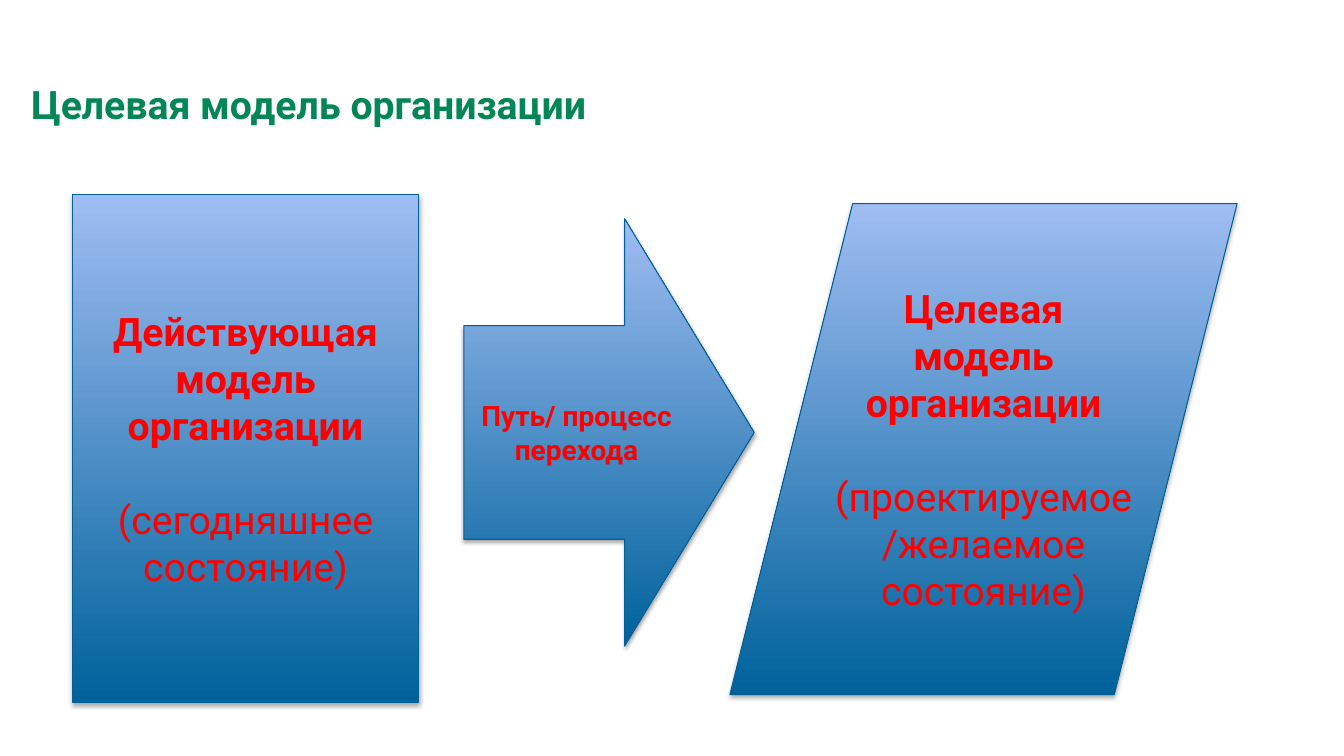
from lxml import etree
from pptx import Presentation
from pptx.dml.color import RGBColor
from pptx.enum.shapes import MSO_SHAPE
from pptx.enum.text import MSO_ANCHOR, PP_ALIGN
from pptx.oxml.ns import qn
from pptx.util import Inches, Pt

COLORS = {
    "white": "FFFFFF",
    "title": "008755",
    "text": "FF0000",
    "outline": "006098",
    "bottom": "00629B",
    "top": "9FBDF3",
    "shadow": "000000",
}


def add_block(kind, box, paragraphs, size, color, align, line, line_width):
    """Add a shape without shadow; paragraphs are (text, bold) pairs."""
    sp = s.shapes.add_shape(kind, *map(Inches, box))
    sp.shadow.inherit = False
    sp.line.color.rgb = RGBColor.from_string(COLORS[line])
    sp.line.width = Pt(line_width)
    tf = sp.text_frame
    tf.word_wrap = True
    tf.vertical_anchor = MSO_ANCHOR.MIDDLE
    for i, (text, bold) in enumerate(paragraphs):
        p = tf.add_paragraph() if i else tf.paragraphs[0]
        p.text = text
        p.alignment = align
        p.font.name = "Roboto"
        p.font.size = Pt(size)
        p.font.bold = bold
        p.font.color.rgb = RGBColor.from_string(COLORS[color])
        if i:
            p.space_before = Pt(33.6)
    return sp


def add_gradient_and_shadow(sp):
    sp.fill.gradient()
    sp.fill.gradient_angle = 90
    for stop, name in zip(sp.fill.gradient_stops, ("bottom", "top")):
        stop.color.rgb = RGBColor.from_string(COLORS[name])
    effects = sp._element.spPr.find(qn("a:effectLst"))
    shadow = etree.SubElement(
        effects, qn("a:outerShdw"), blurRad=str(Pt(3.1)), dist=str(Pt(1.8)),
        dir="5400000", rotWithShape="0")
    color = etree.SubElement(shadow, qn("a:srgbClr"), val=COLORS["shadow"])
    etree.SubElement(color, qn("a:alpha"), val="35000")


prs = Presentation()
prs.slide_width = Inches(13.33)
prs.slide_height = Inches(7.5)
s = prs.slides.add_slide(prs.slide_layouts[6])

title = add_block(MSO_SHAPE.RECTANGLE, (0.21, 0.6, 12.31, 0.85),
                  [("Целевая модель организации", True)],
                  28, "title", PP_ALIGN.LEFT, "white", 2)
title.fill.solid()
title.fill.fore_color.rgb = RGBColor.from_string(COLORS["white"])

# Kind, box, adjustments, font size, paragraphs
stages = [
    (MSO_SHAPE.RECTANGLE, (0.72, 1.93, 3.43, 5.04), [], 28,
     [("Действующая модель организации", True),
      ("(сегодняшнее состояние)", False)]),
    (MSO_SHAPE.PARALLELOGRAM, (7.24, 2.02, 5.03, 4.87), [0.25], 28,
     [("Целевая модель организации", True),
      ("(проектируемое/желаемое состояние)", False)]),
    (MSO_SHAPE.RIGHT_ARROW, (4.6, 2.17, 2.88, 4.24), [0.5, 0.446], 20,
     [("Путь/ процесс перехода", True)]),
]
for kind, box, adjustments, size, paragraphs in stages:
    sp = add_block(kind, box, paragraphs, size, "text", PP_ALIGN.CENTER,
                   "outline", 0.75)
    for i, value in enumerate(adjustments):
        sp.adjustments[i] = value
    add_gradient_and_shadow(sp)

prs.save("out.pptx")
